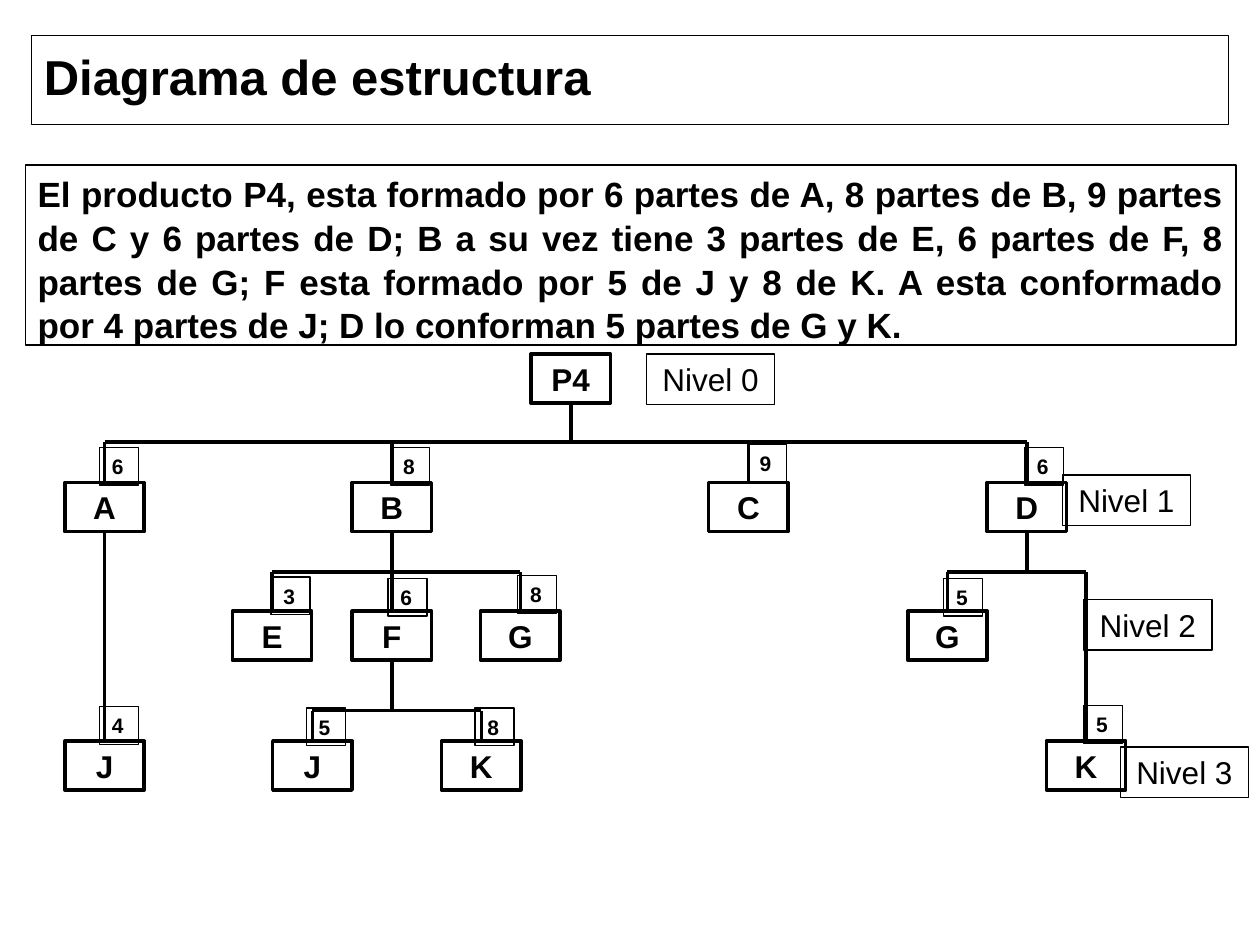
from collections import namedtuple
from dataclasses import dataclass

import pptx
import pptx.dml.color
import pptx.enum.shapes
import pptx.enum.text
import pptx.oxml.ns
import pptx.util
from lxml import etree
from pptx.util import Inches

ALIGN = pptx.enum.text.PP_ALIGN
ANCHOR = pptx.enum.text.MSO_ANCHOR


@dataclass(frozen=True)
class Theme:
    font: str = "Arial"
    ink: str = "000000"
    title: int = 28
    body: int = 20
    label: int = 18
    count: int = 12
    thin: float = 0.75
    thick: float = 2


THEME = Theme()
INK = pptx.dml.color.RGBColor.from_string(THEME.ink)
NODE_W, NODE_H = 0.63, 0.39
LEVEL_TOPS = (2.81, 3.83, 4.85, 5.88)

Node = namedtuple("Node", "name center level count count_at", defaults=(None, None))

P4 = Node("P4", 4.53, 0)
A = Node("A", 0.83, 1, "6", (0.79, 3.55))
B = Node("B", 3.11, 1, "8", (3.1, 3.55))
C = Node("C", 5.94, 1, "9", (5.93, 3.53))
D = Node("D", 8.15, 1, "6", (8.13, 3.55))
E = Node("E", 2.16, 2, "3", (2.15, 4.58))
F = Node("F", 3.11, 2, "6", (3.08, 4.59))
G_OF_B = Node("G", 4.13, 2, "8", (4.11, 4.57))
G_OF_D = Node("G", 7.52, 2, "5", (7.49, 4.59))
J_OF_A = Node("J", 0.83, 3, "4", (0.79, 5.61))
J_OF_F = Node("J", 2.48, 3, "5", (2.43, 5.62))
K_OF_F = Node("K", 3.82, 3, "8", (3.77, 5.62))
K_OF_D = Node("K", 8.62, 3, "5", (8.6, 5.6))

BRANCHES = (
    (P4, 3.51, (A, B, C, D)),
    (A, 4.54, (J_OF_A,)),
    (B, 4.54, (E, F, G_OF_B)),
    (D, 4.54, (G_OF_D, K_OF_D)),
    (F, 5.64, (J_OF_F, K_OF_F)),
)

LEVEL_LABELS = ((5.13, 2.81), (8.43, 3.77), (8.6, 4.76), (8.89, 5.93))

STATEMENT = (
    "El producto P4, esta formado por 6 partes de A, 8 partes de B, 9 partes "
    "de C y 6 partes de D; B a su vez tiene 3 partes de E, 6 partes de F, 8 "
    "partes de G; F esta formado por 5 de J y 8 de K. A esta conformado por "
    "4 partes de J; D lo conforman 5 partes de G y K."
)


def add_box(s, at, text, size, bold=True, weight=THEME.thin,
            align=ALIGN.LEFT, anchor=ANCHOR.TOP, wrap=True, spacing=None):
    sp = s.shapes.add_shape(pptx.enum.shapes.MSO_SHAPE.RECTANGLE,
                            *(Inches(v) for v in at))
    sp.shadow.inherit = False
    sp.fill.background()
    sp.line.color.rgb = INK
    sp.line.width = pptx.util.Pt(weight)
    tf = sp.text_frame
    tf.word_wrap = wrap
    tf.vertical_anchor = anchor
    p = tf.paragraphs[0]
    p.text = text
    p.alignment = align
    p.line_spacing = spacing
    p.font.name = THEME.font
    p.font.size = pptx.util.Pt(size)
    p.font.bold = bold
    p.font.color.rgb = INK


def add_line(s, x1, y1, x2, y2):
    line = s.shapes.add_connector(pptx.enum.shapes.MSO_CONNECTOR.STRAIGHT,
                                  Inches(x1), Inches(y1), Inches(x2), Inches(y2))
    line.line.color.rgb = INK
    line.line.width = pptx.util.Pt(THEME.thick)
    etree.SubElement(line._element.spPr, pptx.oxml.ns.qn("a:effectLst"))


def add_node(s, node):
    at = (node.center - NODE_W / 2, LEVEL_TOPS[node.level], NODE_W, NODE_H)
    add_box(s, at, node.name, THEME.label, weight=THEME.thick,
            align=ALIGN.CENTER, anchor=ANCHOR.MIDDLE, wrap=False)
    if node.count:
        add_box(s, (*node.count_at, 0.31, 0.3), node.count, THEME.count)


def add_branch(s, parent, bus, children):
    stem_end = bus
    for child in children:
        top = LEVEL_TOPS[child.level]
        if child.center == parent.center:
            stem_end = top
        else:
            add_line(s, child.center, bus, child.center, top)
    add_line(s, parent.center, LEVEL_TOPS[parent.level] + NODE_H,
             parent.center, stem_end)
    if len(children) > 1:
        add_line(s, children[0].center, bus, children[-1].center, bus)


def main():
    prs = pptx.Presentation()
    prs.slide_width, prs.slide_height = Inches(10), Inches(7.5)
    s = prs.slides.add_slide(prs.slide_layouts[6])

    add_box(s, (0.25, 0.28, 9.5, 0.71), "Diagrama de estructura", THEME.title,
            anchor=ANCHOR.MIDDLE, spacing=0.9)
    add_box(s, (0.2, 1.31, 9.61, 1.43), STATEMENT, THEME.body,
            align=ALIGN.JUSTIFY, spacing=1.04)

    add_node(s, P4)
    for parent, bus, children in BRANCHES:
        add_branch(s, parent, bus, children)
        for child in children:
            add_node(s, child)

    for level, (left, top) in enumerate(LEVEL_LABELS):
        add_box(s, (left, top, 1.02, 0.4), f"Nivel {level}", THEME.label,
                bold=False, align=ALIGN.CENTER)

    prs.save("out.pptx")


if __name__ == "__main__":
    main()
